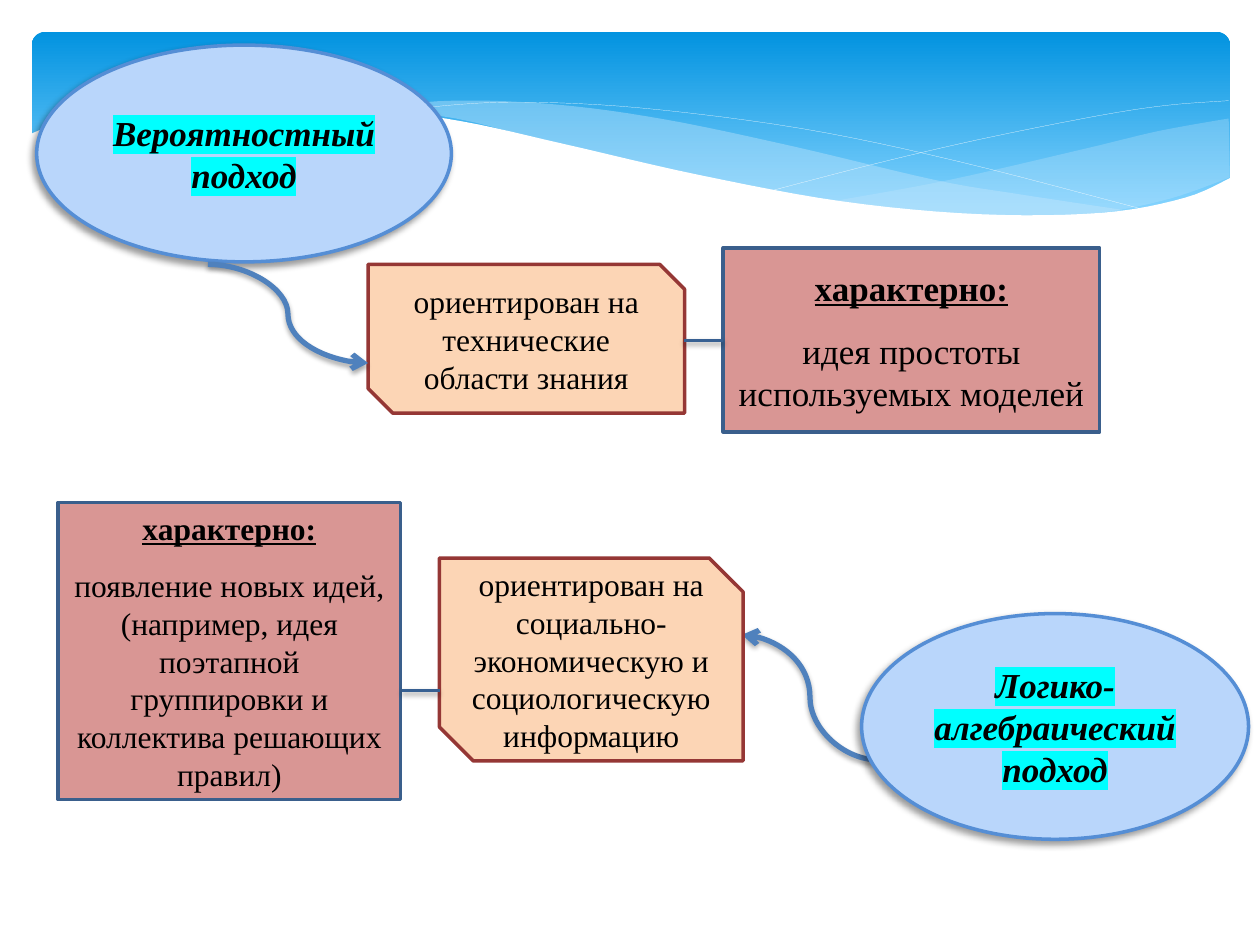
from lxml.etree import SubElement
from pptx import Presentation
from pptx.dml.color import RGBColor
from pptx.enum.shapes import MSO_CONNECTOR as CONN, MSO_SHAPE as SHAPE
from pptx.enum.text import MSO_ANCHOR, PP_ALIGN
from pptx.oxml.ns import qn
from pptx.util import Cm, Pt


def rgb(value):
    return RGBColor.from_string(value)


def smooth(points, steps=6):
    """Run a Catmull-Rom curve through the points."""
    ext = [points[0], *points, points[-1]]
    curve = [points[0]]
    for a, b, c, d in zip(ext, ext[1:], ext[2:], ext[3:]):
        for i in range(1, steps + 1):
            t = i / steps
            curve.append(tuple(
                (2 * q + (r - p) * t + (2 * p - 5 * q + 4 * r - s) * t ** 2
                 + (3 * q - p - 3 * r + s) * t ** 3) / 2
                for p, q, r, s in zip(a, b, c, d)))
    return curve


class SlideBuilder:
    font = "Times New Roman"
    ink = "000000"
    highlight = "00FFFF"

    def __init__(self, s):
        self.s = s

    def shadow(self, shape, alpha, blur, dist, angle):
        shape_pr = shape._element.spPr
        for old in shape_pr.findall(qn("a:effectLst")):
            shape_pr.remove(old)
        effects = SubElement(shape_pr, qn("a:effectLst"))
        outer = SubElement(effects, qn("a:outerShdw"), blurRad=str(Pt(blur)),
                           dist=str(Pt(dist)), dir=str(angle * 60000),
                           algn="ctr", rotWithShape="0")
        color = SubElement(outer, qn("a:srgbClr"), val=self.ink)
        SubElement(color, qn("a:alpha"), val=str(alpha * 1000))

    def banner(self, x, y, w, h, top, bottom):
        sp = self.s.shapes.add_shape(SHAPE.ROUNDED_RECTANGLE, Cm(x), Cm(y), Cm(w), Cm(h))
        sp.shadow.inherit = False
        sp.adjustments[0] = 0.07
        sp.line.fill.background()
        sp.fill.gradient()
        sp.fill.gradient_angle = 270
        for stop, color, position in zip(sp.fill.gradient_stops, (top, bottom), (0, 0.9)):
            stop.color.rgb = rgb(color)
            stop.position = position

    def outline(self, points, close):
        start, *rest = [(Cm(x), Cm(y)) for x, y in points]
        builder = self.s.shapes.build_freeform(*start)
        builder.add_line_segments(rest, close=close)
        sp = builder.convert_to_shape()
        sp.shadow.inherit = False
        return sp

    def wave(self, points, fill, alpha=100):
        sp = self.outline(points, True)
        sp.line.fill.background()
        sp.fill.solid()
        sp.fill.fore_color.rgb = rgb(fill)
        if alpha < 100:
            color = sp._element.spPr.find(qn("a:solidFill"))[0]
            SubElement(color, qn("a:alpha"), val=str(alpha * 1000))

    def hairline(self, points, color):
        sp = self.outline(points, False)
        sp.fill.background()
        sp.line.color.rgb = rgb(color)
        sp.line.width = Pt(0.1)

    def box(self, kind, x, y, w, h, fill, line):
        sp = self.s.shapes.add_shape(kind, Cm(x), Cm(y), Cm(w), Cm(h))
        sp.shadow.inherit = False
        sp.fill.solid()
        sp.fill.fore_color.rgb = rgb(fill)
        sp.line.color.rgb = rgb(line)
        sp.line.width = Pt(2)
        tf = sp.text_frame
        tf.word_wrap = True
        tf.vertical_anchor = MSO_ANCHOR.MIDDLE
        return sp

    def run(self, p, text, size, bold=False, italic=False, underline=False, marked=False):
        p.alignment = PP_ALIGN.CENTER
        r = p.add_run()
        r.text = text
        f = r.font
        f.size, f.bold, f.italic, f.underline = Pt(size), bold, italic, underline
        f.color.rgb = rgb(self.ink)
        if marked:
            mark = SubElement(r._r.get_or_add_rPr(), qn("a:highlight"))
            SubElement(mark, qn("a:srgbClr"), val=self.highlight)
        f.name = self.font

    def approach(self, x, y, w, h, text):
        sp = self.box(SHAPE.OVAL, x, y, w, h, "B9D6FB", "558ED5")
        self.shadow(sp, 40, 4, 3, 135)
        self.run(sp.text_frame.paragraphs[0], text, 20, bold=True, italic=True, marked=True)

    def focus(self, x, y, w, h, text):
        sp = self.box(SHAPE.SNIP_2_DIAG_RECTANGLE, x, y, w, h, "FCD5B5", "953735")
        self.run(sp.text_frame.paragraphs[0], text, 18)

    def trait(self, x, y, w, h, text, size):
        tf = self.box(SHAPE.RECTANGLE, x, y, w, h, "D99694", "3A5F8C").text_frame
        self.run(tf.paragraphs[0], "характерно:", size, bold=True, underline=True)
        p = tf.add_paragraph()
        p.space_before = Pt(size * 0.6)
        self.run(p, text, size)

    def connector(self, kind, x1, y1, x2, y2, color, width):
        cx = self.s.shapes.add_connector(kind, Cm(x1), Cm(y1), Cm(x2), Cm(y2))
        cx.line.color.rgb = rgb(color)
        cx.line.width = Pt(width)
        self.shadow(cx, 35, 3.1, 1.7, 90)
        return cx

    def link(self, x1, x2, y):
        self.connector(CONN.STRAIGHT, x1, y, x2, y, "376092", 2)

    def arrow(self, x1, y1, x2, y2):
        cx = self.connector(CONN.CURVE, x1, y1, x2, y2, "4F81BD", 3)
        SubElement(cx.line._get_or_add_ln(), qn("a:tailEnd"), type="arrow")


RIGHT_TOP = [(24.77, 2.39), (23.37, 2.64), (21.87, 3), (19.13, 3.63), (16.79, 4.06)]
RIGHT_BOTTOM = [(16.79, 4.06), (18.59, 4.27), (20.4, 4.37), (22.15, 4.29),
                (23.57, 4.01), (24.79, 3.58)]
MIDDLE_TOP = [(7.26, 2.18), (9.17, 2.03), (11.23, 2.11), (13.41, 2.41), (15.98, 2.95),
              (18.85, 3.63), (20.5, 3.91), (22.68, 4.24)]
MIDDLE_BOTTOM = [(22.68, 4.24), (21.03, 4.39), (19.33, 4.34), (16.89, 4.09),
                 (14.38, 3.63), (11.4, 2.95), (9.19, 2.39), (7.26, 2.18)]
FALLING = [(7.85, 2.29), (8.97, 2.13), (10.57, 2.06), (12.95, 2.18), (16.15, 2.59),
           (19.3, 3.25), (23.04, 4.22)]
RISING = [(15.57, 3.84), (17.65, 3.3), (19.71, 2.82), (22, 2.36), (23.47, 2.13),
          (24.77, 2.03)]
PAGE_EDGE = [(0.58, 2.72), (1.02, 2.54), (1.9, 2.26), (3.35, 2.05), (4.9, 1.98),
             (6.88, 2.11), (9.27, 2.44), (11.35, 2.9), (14.1, 3.53), (16.97, 4.06),
             (19.76, 4.32), (22.23, 4.29), (23.88, 3.99), (24.82, 3.58)]


def main():
    prs = Presentation()
    prs.slide_width, prs.slide_height = Cm(25.4), Cm(19.05)
    b = SlideBuilder(prs.slides.add_slide(prs.slide_layouts[6]))

    b.banner(0.64, 0.64, 24.16, 3.96, "0293E0", "83D3FE")
    b.wave(smooth(RIGHT_TOP) + smooth(RIGHT_BOTTOM), "C6E7FC", 29)
    b.wave(smooth(MIDDLE_TOP) + smooth(MIDDLE_BOTTOM), "C6E7FC", 40)
    for curve in (FALLING, RISING):
        b.hairline(smooth(curve), "FFFFFF")
    b.wave(smooth(PAGE_EDGE) + [(24.82, 5.69), (0.58, 5.69)], "FFFFFF")

    b.arrow(17.7, 15.32, 14.96, 12.8)
    b.approach(0.74, 0.91, 8.36, 4.37, "Вероятностный подход")
    b.approach(17.37, 12.37, 7.8, 4.55, "Логико-алгебраический подход")

    b.focus(7.42, 5.33, 6.38, 3, "ориентирован на технические области знания")
    b.arrow(4.19, 5.33, 7.42, 7.32)
    b.trait(14.58, 5, 7.59, 3.71, "идея простоты используемых моделей", 20)
    b.link(13.79, 14.58, 6.86)

    b.focus(8.86, 11.25, 6.12, 4.09,
            "ориентирован на социально-экономическую и социологическую информацию")
    b.trait(1.17, 10.13, 6.91, 5.99,
            "появление новых идей, (например, идея поэтапной группировки "
            "и коллектива решающих правил)", 18)
    b.link(8.1, 8.86, 13.92)

    prs.save("out.pptx")


if __name__ == "__main__":
    main()
